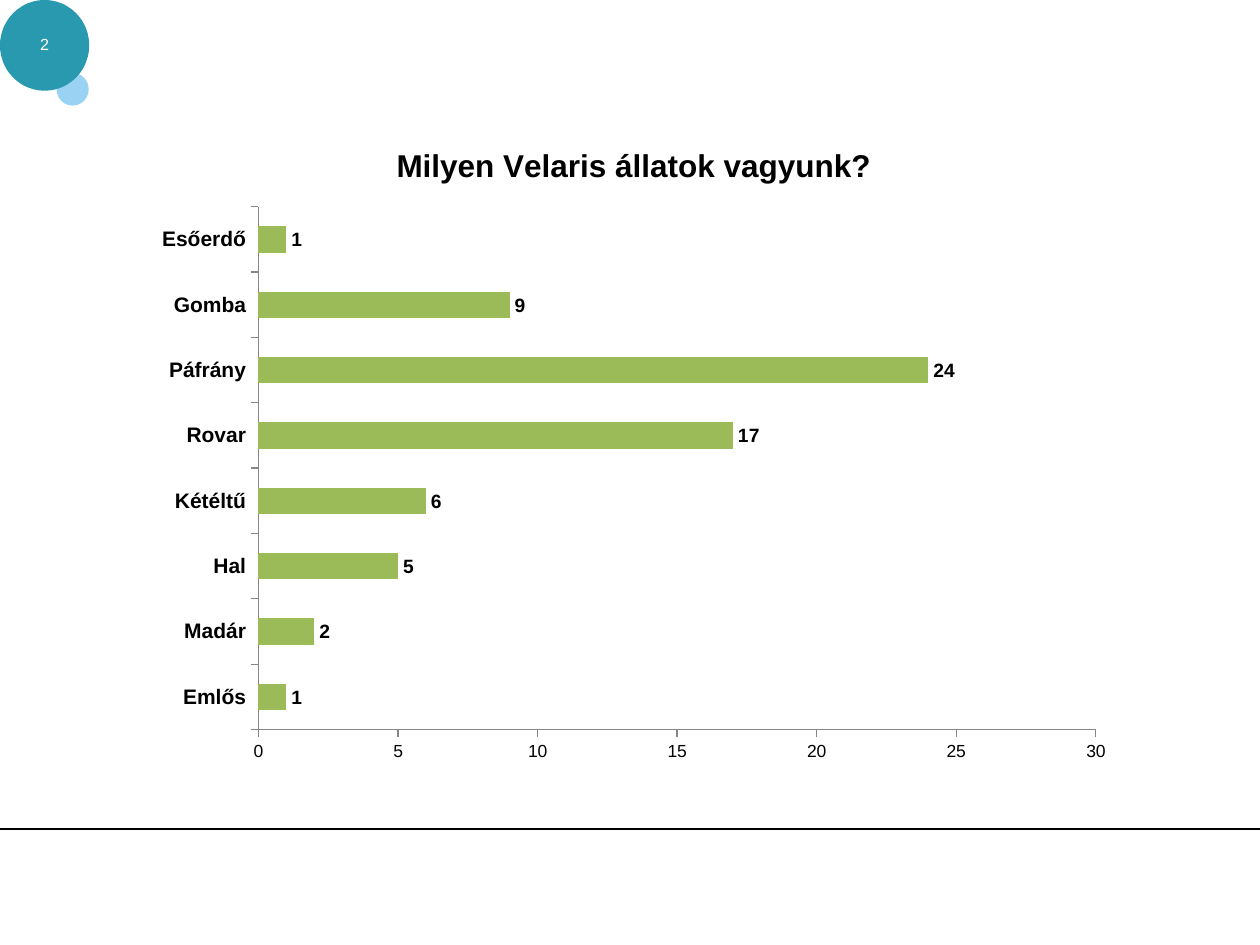
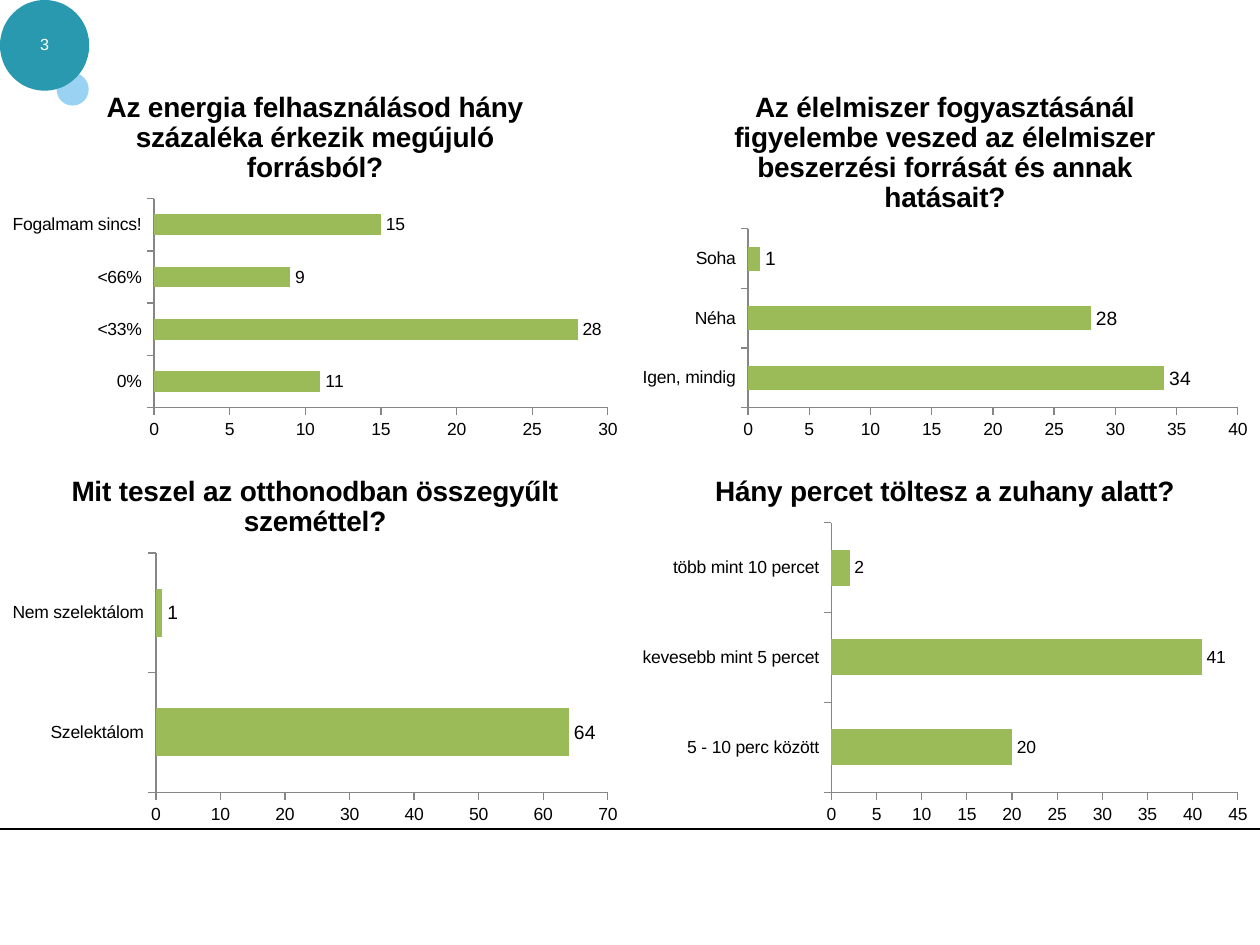
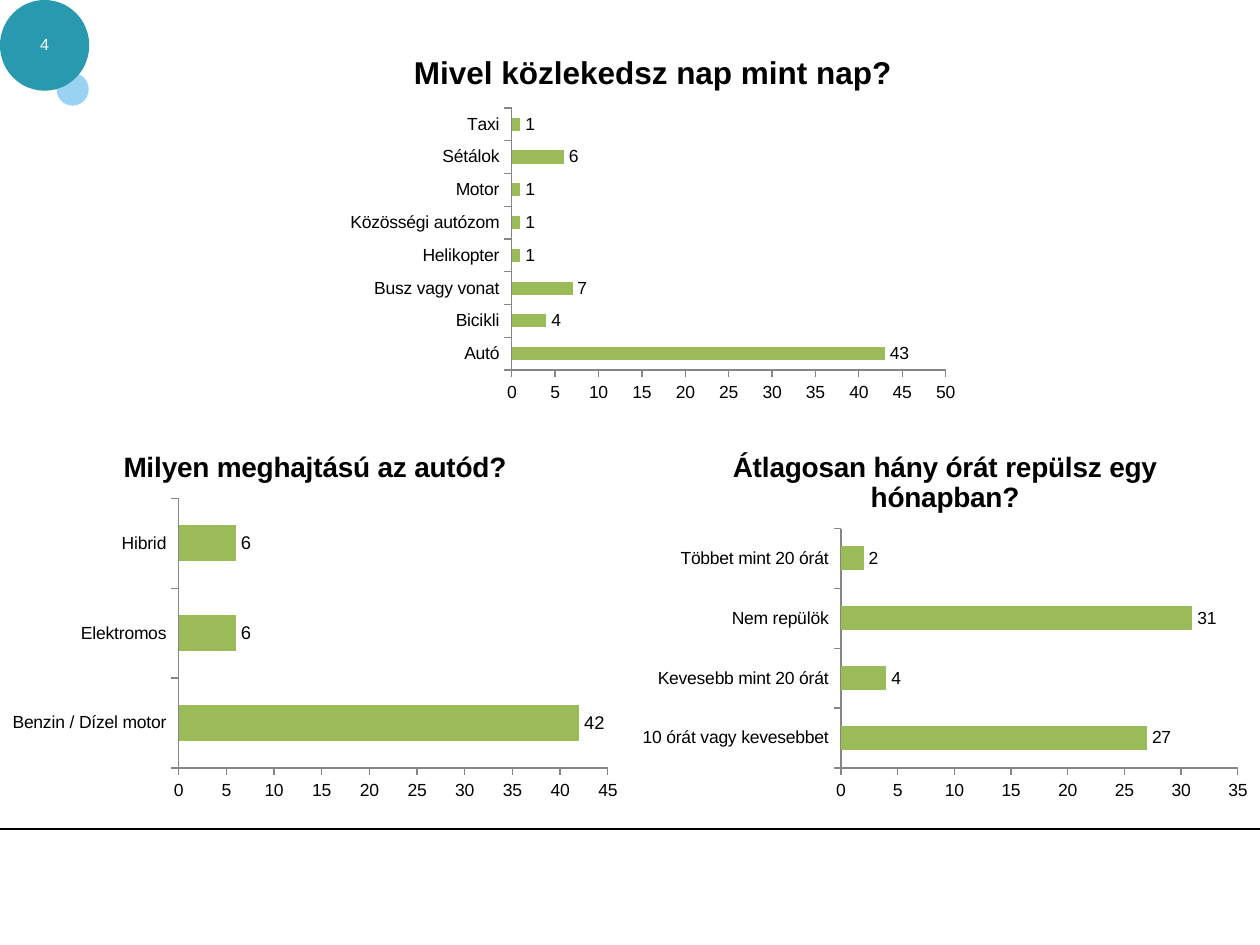
from lxml import etree
from pptx import Presentation
from pptx.chart.data import CategoryChartData as Data
from pptx.dml.color import RGBColor
from pptx.enum.chart import XL_CHART_TYPE as Type, XL_LABEL_POSITION as Spot
from pptx.enum.shapes import MSO_CONNECTOR as Link, MSO_SHAPE as Shape
from pptx.enum.text import MSO_ANCHOR as Anchor, PP_ALIGN as Align
from pptx.oxml.ns import qn
from pptx.util import Cm, Pt

BLACK, WHITE = "000000", "FFFFFF"
TEAL, SKY = "2899AF", "9AD2F4"
GREEN, GRAY = "9BBB59", "868686"
FONT = "Arial"
WIDE, HIGH = 12.7, 7.62  # size of a chart that fills half the slide width


def paint(color, hue):
    color.rgb = RGBColor.from_string(hue)


def add_bars(slide, place, title, bars, size=16, label=10, main=False):
    """Add a bar chart; a main chart has large bold categories and bold values."""
    data = Data()
    data.categories = list(bars)
    data.add_series("Series 1", list(bars.values()))
    box = [Cm(n) for n in place]
    chart = slide.shapes.add_chart(Type.BAR_CLUSTERED, *box, data).chart
    chart.has_legend = False
    chart.font.name, chart.font.size = FONT, Pt(10)
    paint(chart.font.color, BLACK)

    chart.has_title = True
    head = chart.chart_title.text_frame
    head.text = title
    font = head.paragraphs[0].font
    font.name, font.size, font.bold = FONT, Pt(size), True
    paint(font.color, BLACK)

    for axis in (chart.category_axis, chart.value_axis):
        axis.has_major_gridlines = False
        axis.format.line.width = Pt(0.75)
        paint(axis.format.line.color, GRAY)
    if main:
        names = chart.category_axis.tick_labels.font
        names.size, names.bold = Pt(12), True

    plot = chart.plots[0]
    plot.gap_width, plot.vary_by_categories = 150, False
    fill = plot.series[0].format.fill
    fill.solid()
    paint(fill.fore_color, GREEN)
    plot.has_data_labels = True
    tags = plot.data_labels
    tags.show_value, tags.position = True, Spot.OUTSIDE_END
    tags.font.name, tags.font.size, tags.font.bold = FONT, Pt(label), main
    paint(tags.font.color, BLACK)


deck = Presentation()
deck.slide_width, deck.slide_height = Cm(25.4), Cm(19.05)

# Shared frame: page number on two discs, and a rule at the foot
slides = []
for page in (2, 3, 4):
    slide = deck.slides.add_slide(deck.slide_layouts[6])
    slides.append(slide)
    for hue, *spot in ((SKY, 1.14, 1.47, 0.65, 0.66), (TEAL, 0, 0, 1.8, 1.83)):
        disc = slide.shapes.add_shape(Shape.OVAL, *[Cm(n) for n in spot])
        disc.shadow.inherit = False
        disc.fill.solid()
        paint(disc.fill.fore_color, hue)
        disc.line.fill.background()

    frame = slide.shapes.add_textbox(Cm(-0.05), Cm(0.56), Cm(1.9), Cm(0.66)).text_frame
    frame.word_wrap, frame.vertical_anchor = True, Anchor.MIDDLE
    para = frame.paragraphs[0]
    para.text, para.alignment = str(page), Align.CENTER
    para.font.name, para.font.size = FONT, Pt(9.2)
    paint(para.font.color, WHITE)

    rule = slide.shapes.add_connector(Link.STRAIGHT, 0, Cm(16.71), Cm(25.42), Cm(16.71))
    rule.line.width = Pt(0.75)
    paint(rule.line.color, BLACK)
    etree.SubElement(rule._element.spPr, qn("a:effectLst"))

beasts, habits, travel = slides

# Slide 2: animals
add_bars(beasts, (2.87, 2.41, 19.81, 13.21), "Milyen Velaris állatok vagyunk?",
         {"Emlős": 1, "Madár": 2, "Hal": 5, "Kétéltű": 6,
          "Rovar": 17, "Páfrány": 24, "Gomba": 9, "Esőerdő": 1},
         size=18, label=11, main=True)

# Slide 3: habits, two by two
polls = [
    ("Az energia felhasználásod hány százaléka érkezik megújuló forrásból?", 10,
     {"0%": 11, "<33%": 28, "<66%": 9, "Fogalmam sincs!": 15}),
    ("Az élelmiszer fogyasztásánál figyelembe veszed az élelmiszer "
     "beszerzési forrását és annak hatásait?", 11,
     {"Igen, mindig": 34, "Néha": 28, "Soha": 1}),
    ("Mit teszel az otthonodban összegyűlt szeméttel?", 11,
     {"Szelektálom": 64, "Nem szelektálom": 1}),
    ("Hány percet töltesz a zuhany alatt?", 10,
     {"5 - 10 perc között": 20, "kevesebb mint 5 percet": 41,
      "több mint 10 percet": 2}),
]
for i, (title, label, bars) in enumerate(polls):
    row, col = divmod(i, 2)
    place = (col * WIDE, 1.4 + row * 7.75, WIDE, HIGH)
    add_bars(habits, place, title, bars, label=label)

# Slide 4: travel, one chart above two
add_bars(travel, (6.81, 0.64, WIDE, HIGH), "Mivel közlekedsz nap mint nap?",
         {"Autó": 43, "Bicikli": 4, "Busz vagy vonat": 7, "Helikopter": 1,
          "Közösségi autózom": 1, "Motor": 1, "Sétálok": 6, "Taxi": 1}, size=18)
trips = [
    ("Milyen meghajtású az autód?", 10.5,
     {"Benzin / Dízel motor": 42, "Elektromos": 6, "Hibrid": 6}),
    ("Átlagosan hány órát repülsz egy hónapban?", 10,
     {"10 órát vagy kevesebbet": 27, "Kevesebb mint 20 órát": 4,
      "Nem repülök": 31, "Többet mint 20 órát": 2}),
]
for col, (title, label, bars) in enumerate(trips):
    add_bars(travel, (col * WIDE, 8.66, WIDE, HIGH), title, bars, label=label)

deck.save("out.pptx")
